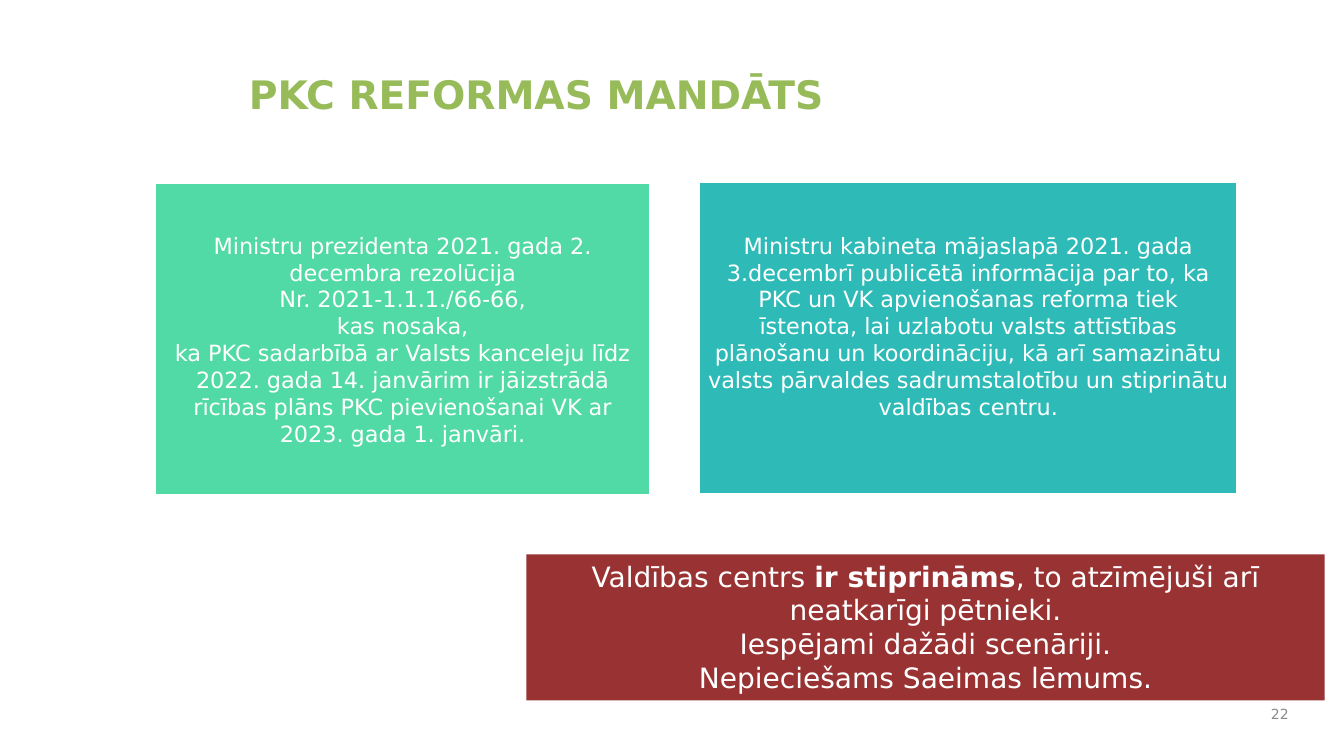
"""Builds the slide on the mandate for the PKC reform."""
from pptx import Presentation
from pptx.dml.color import RGBColor
from pptx.enum.shapes import MSO_SHAPE
from pptx.enum.text import MSO_ANCHOR, PP_ALIGN
from pptx.util import Inches, Pt

SLIDE_WIDTH, SLIDE_HEIGHT = Inches(13.33), Inches(7.5)
FONT = "DejaVu Sans"
WHITE, GREY, LIME = "FFFFFF", "8C8C8C", "98BB59"
MINT, TEAL, RED = "52DAA6", "2EBBB8", "993333"

RESOLUTION = [
    [("Ministru prezidenta 2021. gada 2. decembra rezolūcija", False)],
    [("Nr. 2021-1.1.1./66-66,", False)],
    [("kas nosaka,", False)],
    [("ka PKC sadarbībā ar Valsts kanceleju līdz 2022. gada 14. janvārim "
      "ir jāizstrādā rīcības plāns PKC pievienošanai VK ar "
      "2023. gada 1. janvāri.", False)],
]
ANNOUNCEMENT = [
    [("Ministru kabineta mājaslapā 2021. gada 3.decembrī publicētā informācija "
      "par to, ka PKC un VK apvienošanas reforma tiek īstenota, lai uzlabotu "
      "valsts attīstības plānošanu un koordināciju, kā arī samazinātu valsts "
      "pārvaldes sadrumstalotību un stiprinātu valdības centru.", False)],
]
CONCLUSION = [
    [("Valdības centrs ", False), ("ir stiprināms", True),
     (", to atzīmējuši arī neatkarīgi pētnieki.", False)],
    [("Iespējami dažādi scenāriji.", False)],
    [("Nepieciešams Saeimas lēmums.", False)],
]


def color(code):
    """Return the colour for a hex string."""
    return RGBColor.from_string(code)


def place(left, top, width, height):
    """Turn percentages of the slide into lengths."""
    return (int(SLIDE_WIDTH * left / 100), int(SLIDE_HEIGHT * top / 100),
            int(SLIDE_WIDTH * width / 100), int(SLIDE_HEIGHT * height / 100))


def write(box, paragraphs, size, ink, align=PP_ALIGN.CENTER, anchor=MSO_ANCHOR.TOP):
    """Fill a box with paragraphs made of (text, bold) spans."""
    frame = box.text_frame
    frame.word_wrap = True
    frame.vertical_anchor = anchor
    for index, spans in enumerate(paragraphs):
        para = frame.add_paragraph() if index else frame.paragraphs[0]
        para.alignment = align
        for text, bold in spans:
            span = para.add_run()
            span.text = text
            span.font.name = FONT
            span.font.size = Pt(size)
            span.font.bold = bold
            span.font.color.rgb = color(ink)


def add_label(page, area, text, size, ink, bold, align, anchor):
    """Add a one-line text box."""
    box = page.shapes.add_textbox(*place(*area))
    write(box, [[(text, bold)]], size, ink, align, anchor)


def add_panel(page, area, fill, paragraphs, size, anchor=MSO_ANCHOR.TOP,
              line=None, side=0.1, top=0.05):
    """Add a filled rectangle with centred white text."""
    panel = page.shapes.add_shape(MSO_SHAPE.RECTANGLE, *place(*area))
    panel.shadow.inherit = False
    panel.fill.solid()
    panel.fill.fore_color.rgb = color(fill)
    if line:
        panel.line.color.rgb = color(line)
        panel.line.width = Pt(1)
    else:
        panel.line.fill.background()
    frame = panel.text_frame
    frame.margin_left = frame.margin_right = Inches(side)
    frame.margin_top = Inches(top)
    write(panel, paragraphs, size, WHITE, anchor=anchor)


def main():
    """Build and save the deck."""
    deck = Presentation()
    deck.slide_width, deck.slide_height = SLIDE_WIDTH, SLIDE_HEIGHT
    page = deck.slides.add_slide(deck.slide_layouts[6])
    add_label(page, (93.32, 92.27, 3.3, 4.4), "22", 10, GREY, False,
              PP_ALIGN.RIGHT, MSO_ANCHOR.MIDDLE)
    add_label(page, (17.78, 8.67, 45.69, 7.6), "PKC REFORMAS MANDĀTS", 28, LIME,
              True, PP_ALIGN.LEFT, MSO_ANCHOR.TOP)
    add_panel(page, (11.55, 24.27, 36.83, 41.2), MINT, RESOLUTION, 16,
              MSO_ANCHOR.MIDDLE, WHITE, side=0.07)
    add_panel(page, (52.06, 24.13, 39.98, 41.2), TEAL, ANNOUNCEMENT, 16,
              line=WHITE, side=0.07, top=0.49)
    add_panel(page, (39.16, 73.33, 59.41, 19.33), RED, CONCLUSION, 20)
    deck.save("out.pptx")


if __name__ == "__main__":
    main()
